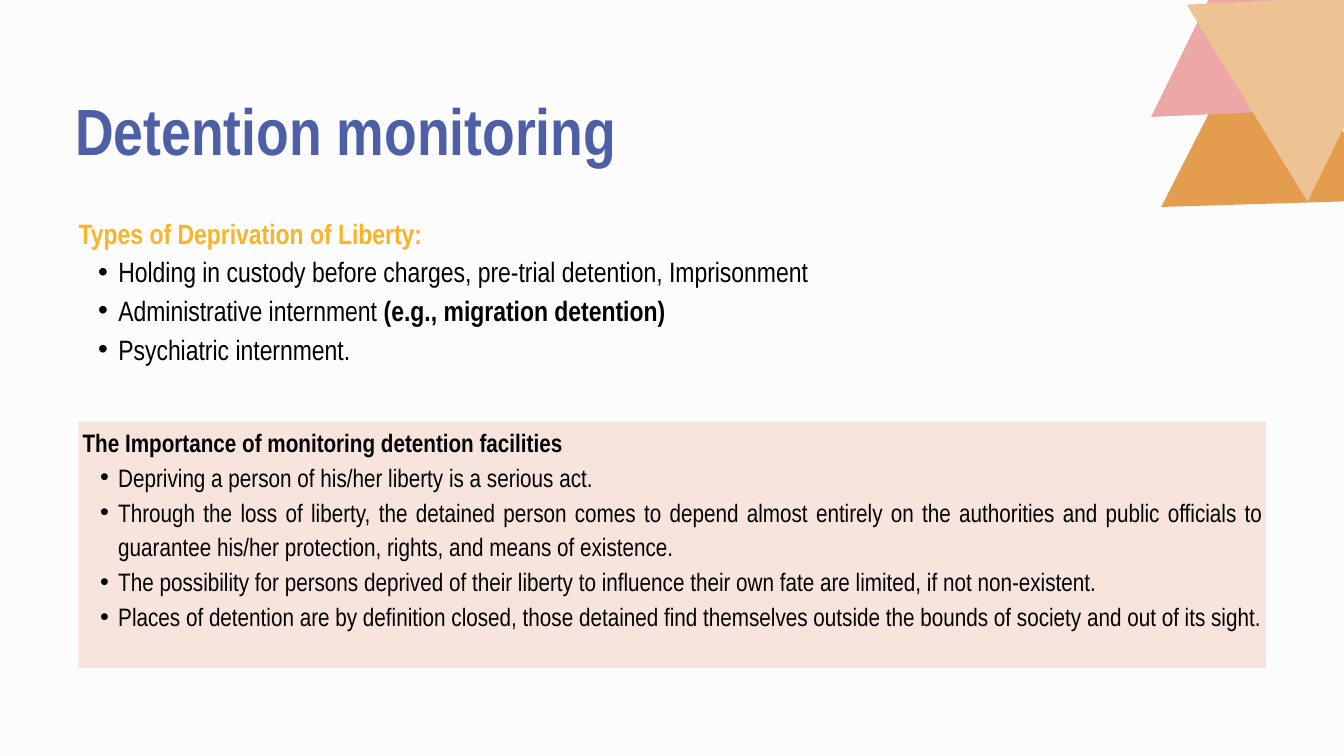
import pptx
import pptx.dml.color
import pptx.enum.shapes
import pptx.enum.text
import pptx.oxml.ns
import pptx.util
from lxml import etree

EMU_PER_PX = 9144  # 100 px to the inch
FONT = "Arial Narrow"
COLORS = {
    "background": "FCFCFC",
    "title": "4E5FA7",
    "heading": "F9B428",
    "text": "000000",
    "panel": "F7E5DD",
    "orange": "E49C4E",
    "pink": "EDA7A7",
    "tan": "EEC394",
}


def px(length):
    return pptx.util.Emu(length * EMU_PER_PX)


def rgb(name):
    return pptx.dml.color.RGBColor.from_string(COLORS[name])


class SlideBuilder:
    """Holds the style and the current slide."""

    def __init__(self, deck):
        self.page = deck.slides.add_slide(deck.slide_layouts[5])
        self.page.background.fill.solid()
        self.page.background.fill.fore_color.rgb = rgb("background")

    def place(self, box, left, top, width, height):
        box.left, box.top, box.width, box.height = map(px, (left, top, width, height))

    def paint(self, shape, color):
        shape.shadow.inherit = False
        shape.fill.solid()
        shape.fill.fore_color.rgb = rgb(color)
        shape.line.fill.background()

    def prepare_frame(self, frame, inset=0):
        frame.word_wrap = True
        frame.auto_size = pptx.enum.text.MSO_AUTO_SIZE.NONE
        frame.vertical_anchor = pptx.enum.text.MSO_ANCHOR.TOP
        frame.margin_left = frame.margin_right = px(inset)
        frame.margin_top = frame.margin_bottom = px(inset)

    def format_span(self, span, size, color, bold):
        span.font.name = FONT
        span.font.size = pptx.util.Pt(size)
        span.font.bold = bold
        span.font.color.rgb = rgb(color)

    def title(self, text, bounds, size, spacing):
        box = self.page.shapes.title
        self.place(box, *bounds)
        self.prepare_frame(box.text_frame)
        box.text_frame.text = text
        para = box.text_frame.paragraphs[0]
        para.alignment = pptx.enum.text.PP_ALIGN.LEFT
        para.line_spacing = pptx.util.Pt(spacing)
        self.format_span(para.runs[0], size, "title", True)

    def triangle(self, points, color):
        builder = self.page.shapes.build_freeform(*points[0], scale=EMU_PER_PX)
        builder.add_line_segments(points[1:], close=True)
        self.paint(builder.convert_to_shape(), color)

    def panel(self, bounds, color):
        kind = pptx.enum.shapes.MSO_SHAPE.RECTANGLE
        self.paint(self.page.shapes.add_shape(kind, *map(px, bounds)), color)

    def bullet(self, para, indent, hanging):
        para.level = 1
        properties = para._p.get_or_add_pPr()
        properties.set("marL", str(px(indent)))
        properties.set("indent", str(-px(hanging)))
        font = etree.SubElement(properties, pptx.oxml.ns.qn("a:buFont"))
        font.set("typeface", "Arial")
        mark = etree.SubElement(properties, pptx.oxml.ns.qn("a:buChar"))
        mark.set("char", "•")

    def bullet_list(self, heading, items, bounds, size, spacing, indent, hanging,
                    heading_color="text", inset=0):
        """A bold heading over bullets; each item is (plain text, bold ending)."""
        frame = self.page.shapes.add_textbox(*map(px, bounds)).text_frame
        self.prepare_frame(frame, inset)
        frame.text = "\n".join([heading] + [plain for plain, _ in items])
        for para in frame.paragraphs:
            para.alignment = pptx.enum.text.PP_ALIGN.JUSTIFY
            para.line_spacing = pptx.util.Pt(spacing)
        first, *rest = frame.paragraphs
        self.format_span(first.runs[0], size, heading_color, True)
        for para, (_, ending) in zip(rest, items):
            self.bullet(para, indent, hanging)
            self.format_span(para.runs[0], size, "text", False)
            if ending:
                span = para.add_run()
                span.text = ending
                self.format_span(span, size, "text", True)


def main():
    deck = pptx.Presentation()
    deck.slide_width, deck.slide_height = px(2000), px(1125)
    slide = SlideBuilder(deck)

    # Title
    slide.title("Detention monitoring", (112, 84, 1048, 164), size=70, spacing=120)

    # Types of deprivation of liberty
    slide.bullet_list(
        "Types of Deprivation of Liberty:",
        [
            ("Holding in custody before charges, pre-trial detention, Imprisonment", ""),
            ("Administrative internment", " (e.g., migration detention)"),
            ("Psychiatric internment.", ""),
        ],
        (117, 314, 1262, 235), size=30, spacing=41.4, indent=59, hanging=30,
        heading_color="heading",
    )

    # Importance of monitoring, on a tinted panel
    slide.panel((117, 627, 1767, 367), "panel")
    slide.bullet_list(
        "The Importance of monitoring detention facilities",
        [
            ("Depriving a person of his/her liberty is a serious act.", ""),
            ("Through the loss of liberty, the detained person comes to depend almost "
             "entirely on the authorities and public officials to guarantee his/her "
             "protection, rights, and means of existence.", ""),
            ("The possibility for persons deprived of their liberty to influence their "
             "own fate are limited, if not non-existent.", ""),
            ("Places of detention are by definition closed, those detained find "
             "themselves outside the bounds of society and out of its sight.", ""),
        ],
        (117, 623, 1767, 371), size=27, spacing=37.3, indent=53, hanging=27, inset=6,
    )

    # Corner triangles, back to front
    slide.triangle([(1884, 2), (2059, 298), (1728, 308)], "orange")
    slide.triangle([(1864, -135), (2044, 159), (1713, 174)], "pink")
    slide.triangle([(1946, 300), (1766, 7), (2096, -9)], "tan")

    deck.save("out.pptx")


if __name__ == "__main__":
    main()
